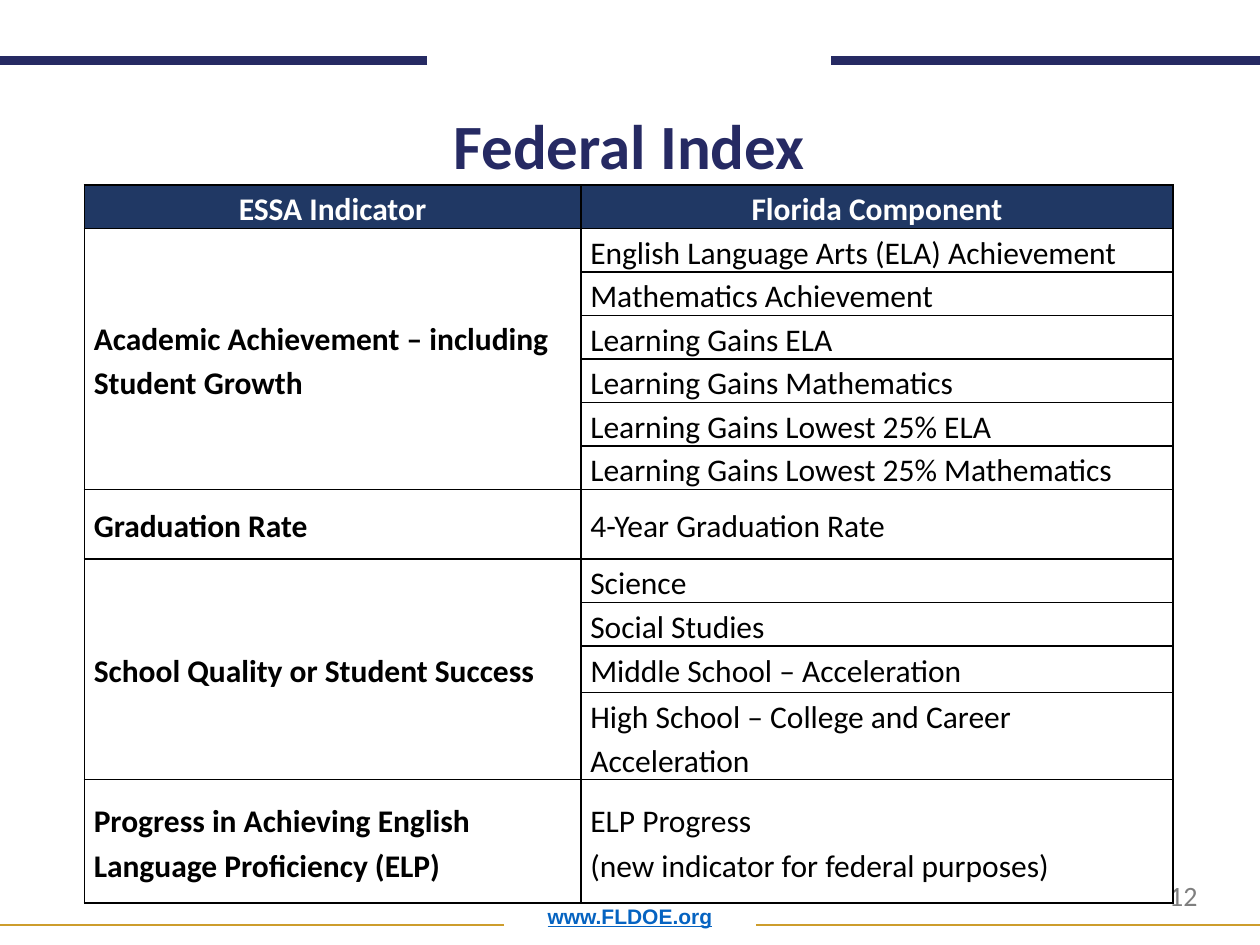
from dataclasses import dataclass
from lxml.etree import SubElement as Sub
from pptx import Presentation
from pptx.dml.color import RGBColor as RGB
from pptx.enum.shapes import MSO_CONNECTOR as Conn
from pptx.enum.text import MSO_ANCHOR as Anchor, PP_ALIGN as Align
from pptx.oxml.ns import qn
from pptx.util import Cm, Pt


@dataclass(frozen=True)
class Theme:
    navy: str = "262A63"
    gold: str = "CD9D2C"
    head: str = "203864"
    link: str = "0563C1"
    gray: str = "7F7F7F"
    black: str = "000000"
    white: str = "FFFFFF"
    font: str = "Calibri"
    web: str = "Arial"
    title: int = 36
    body: int = 18
    page: int = 16
    foot: int = 12


theme = Theme()


def write(para, text, size, color, bold=False, font=theme.font):
    run = para.add_run()
    run.text = text
    run.font.name = font
    run.font.size = Pt(size)
    run.font.bold = bold
    run.font.color.rgb = RGB.from_string(color)
    return run


def place(left, top, width, height, anchor):
    box = slide.shapes.add_textbox(Cm(left), Cm(top), Cm(width), Cm(height))
    frame = box.text_frame
    frame.word_wrap = True
    frame.vertical_anchor = anchor
    return frame.paragraphs[0]


deck = Presentation()
deck.slide_width = Cm(25.4)
deck.slide_height = Cm(19.05)
slide = deck.slides.add_slide(deck.slide_layouts[6])

para = place(1.75, 17.78, 21.9, 1.07, Anchor.BOTTOM)
para.alignment = Align.CENTER
para.line_spacing = 0.9
run = write(para, "www.FLDOE.org", theme.foot, theme.link, True, theme.web)
run.font.underline = True

rules = [
    (10.16, 0, 18.64, theme.gold, 1),
    (8.61, 0, 1.22, theme.navy, 5),
    (25.4, 16.76, 1.22, theme.navy, 5),
    (25.4, 15.24, 18.64, theme.gold, 1),
]
for start, end, top, color, width in rules:
    rule = slide.shapes.add_connector(Conn.STRAIGHT, Cm(start), Cm(top), Cm(end), Cm(top))
    rule.line.color.rgb = RGB.from_string(color)
    rule.line.width = Pt(width)
    Sub(rule._element.spPr, qn("a:effectLst"))

para = place(23.32, 17.58, 1.98, 0.94, Anchor.TOP)
write(para, "12", theme.page, theme.gray)

para = place(0.41, 1.6, 24.54, 2.21, Anchor.BOTTOM)
para.alignment = Align.CENTER
para.line_spacing = 0.9
write(para, "Federal Index", theme.title, theme.navy, True)

groups = [
    ("ESSA Indicator", [("Florida Component", 0.86)]),
    ("Academic Achievement – including Student Growth", [
        ("English Language Arts (ELA) Achievement", 0.86),
        ("Mathematics Achievement", 0.86),
        ("Learning Gains ELA", 0.86),
        ("Learning Gains Mathematics", 0.86),
        ("Learning Gains Lowest 25% ELA", 0.86),
        ("Learning Gains Lowest 25% Mathematics", 0.86),
    ]),
    ("Graduation Rate", [("4-Year Graduation Rate", 1.4)]),
    ("School Quality or Student Success", [
        ("Science", 0.86),
        ("Social Studies", 0.86),
        ("Middle School – Acceleration", 0.94),
        ("High School – College and Career Acceleration", 1.75),
    ]),
    ("Progress in Achieving English Language Proficiency (ELP)", [
        ("ELP Progress\n(new indicator for federal purposes)", 2.49),
    ]),
]
rows = [
    (name if num == 0 else "", part, high, len(parts) if num == 0 else 1)
    for name, parts in groups
    for num, (part, high) in enumerate(parts)
]
total = sum(high for _, _, high, _ in rows)
table = slide.shapes.add_table(len(rows), 2, Cm(1.7), Cm(3.73), Cm(21.95), Cm(total)).table
table.first_row = True
table.horz_banding = False
for col, width in zip(table.columns, (10.01, 11.94)):
    col.width = Cm(width)

for row, (name, part, high, span) in enumerate(rows):
    table.rows[row].height = Cm(high)
    top = row == 0
    for col, text in enumerate((name, part)):
        cell = table.cell(row, col)
        cell.vertical_anchor = Anchor.MIDDLE
        cell.margin_left = cell.margin_right = Cm(0.19)
        cell.margin_top = cell.margin_bottom = 0
        props = cell._tc.get_or_add_tcPr()
        for side in ("lnL", "lnR", "lnT", "lnB"):
            edge = Sub(props, qn(f"a:{side}"), w=str(Pt(1)))
            Sub(Sub(edge, qn("a:solidFill")), qn("a:srgbClr"), val=theme.black)
        cell.fill.solid()
        cell.fill.fore_color.rgb = RGB.from_string(theme.head if top else theme.white)
        if not text:
            continue
        frame = cell.text_frame
        for num, line in enumerate(text.split("\n")):
            para = frame.add_paragraph() if num else frame.paragraphs[0]
            para.alignment = Align.CENTER if top else Align.LEFT
            para.line_spacing = 1.15
            write(para, line, theme.body, theme.white if top else theme.black, top or col == 0)
    if span > 1:
        table.cell(row, 0).merge(table.cell(row + span - 1, 0))

deck.save("out.pptx")
